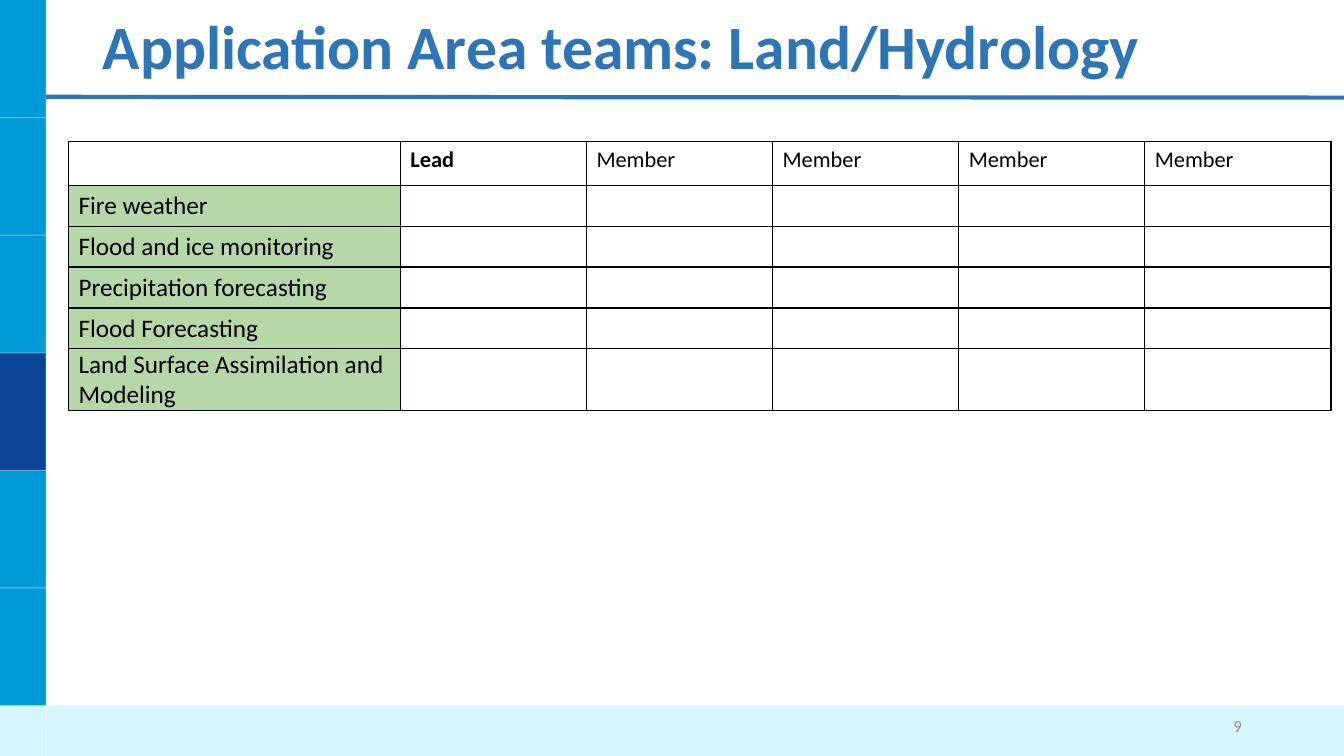
from dataclasses import dataclass

from lxml.etree import SubElement
from pptx import Presentation
from pptx.dml.color import RGBColor
from pptx.enum.shapes import MSO_CONNECTOR, MSO_SHAPE
from pptx.enum.text import MSO_ANCHOR, MSO_AUTO_SIZE, PP_ALIGN
from pptx.oxml.ns import qn
from pptx.slide import Slide
from pptx.table import _Cell
from pptx.text.text import _Paragraph
from pptx.util import Cm, Pt


@dataclass(frozen=True)
class Theme:
    font: str = "Calibri"
    blue: str = "2E75B6"
    side: str = "0099D8"
    navy: str = "0B4596"
    foot: str = "D5F5FF"
    green: str = "B6D7A8"
    black: str = "000000"
    white: str = "FFFFFF"
    gray: str = "8C8C8C"
    title: int = 44
    label: int = 18
    head: int = 16
    page: int = 12


@dataclass(frozen=True)
class Block:
    left: float
    top: float
    width: float
    height: float
    color: str


@dataclass(frozen=True)
class Rule:
    x1: float
    y1: float
    x2: float
    y2: float
    color: str
    width: float
    alpha: int = 100


THEME = Theme()
WIDE, HIGH = 33.87, 19.05
SIDE = 1.16
FOOT = 17.78
STEP = FOOT / 6

BLOCKS = [
    Block(0, 0, SIDE, HIGH, THEME.side),
    Block(0, 3 * STEP, SIDE, STEP, THEME.navy),
    Block(0, FOOT, WIDE, HIGH - FOOT, THEME.foot),
]
RULES = [
    *(Rule(0, n * STEP, SIDE, n * STEP, THEME.white, 0.75, 40) for n in range(1, 7)),
    Rule(SIDE, 0, SIDE, HIGH, THEME.white, 0.75, 40),
    Rule(SIDE, 2.44, WIDE, 2.46, THEME.blue, 3),
]
HEADS = ["Lead"] + ["Member"] * 4
AREAS = [
    "Fire weather",
    "Flood and ice monitoring",
    "Precipitation forecasting",
    "Flood Forecasting",
    "Land Surface Assimilation and Modeling",
]
COLS = [8.36] + [4.69] * len(HEADS)
ROWS = [1.11] + [1.03] * (len(AREAS) - 1) + [1.56]


def add_run(para: _Paragraph, text: str, size: int, color: str, bold: bool = False) -> None:
    run = para.add_run()
    run.text = text
    run.font.name = THEME.font
    run.font.size = Pt(size)
    run.font.bold = bold
    run.font.color.rgb = RGBColor.from_string(color)


def add_block(slide: Slide, block: Block) -> None:
    shape = slide.shapes.add_shape(
        MSO_SHAPE.RECTANGLE, Cm(block.left), Cm(block.top), Cm(block.width), Cm(block.height)
    )
    shape.shadow.inherit = False
    shape.fill.solid()
    shape.fill.fore_color.rgb = RGBColor.from_string(block.color)
    shape.line.fill.background()


def add_rule(slide: Slide, rule: Rule) -> None:
    line = slide.shapes.add_connector(
        MSO_CONNECTOR.STRAIGHT, Cm(rule.x1), Cm(rule.y1), Cm(rule.x2), Cm(rule.y2)
    )
    line.line.width = Pt(rule.width)
    line.line.color.rgb = RGBColor.from_string(rule.color)
    props = line._element.spPr
    if rule.alpha < 100:
        tint = props.find(".//" + qn("a:srgbClr"))
        SubElement(tint, qn("a:alpha"), val=str(rule.alpha * 1000))
    SubElement(props, qn("a:effectLst"))


def add_title(slide: Slide, text: str) -> None:
    title = slide.shapes.title
    title.left, title.top, title.width, title.height = Cm(2.34), Cm(0.1), Cm(29.21), Cm(2.31)
    frame = title.text_frame
    frame.auto_size = MSO_AUTO_SIZE.NONE
    frame.vertical_anchor = MSO_ANCHOR.MIDDLE
    para = frame.paragraphs[0]
    para.alignment = PP_ALIGN.LEFT
    para.line_spacing = 0.9
    add_run(para, text, THEME.title, THEME.blue, True)


def style_cell(cell: _Cell, color: str | None = None) -> None:
    """Draw the cell's four borders, then fill it or leave it clear."""
    props = cell._tc.get_or_add_tcPr()
    for side in ("lnL", "lnR", "lnT", "lnB"):
        edge = SubElement(props, qn(f"a:{side}"), w=str(Pt(1)))
        fill = SubElement(edge, qn("a:solidFill"))
        SubElement(fill, qn("a:srgbClr"), val=THEME.black)
    if color:
        cell.fill.solid()
        cell.fill.fore_color.rgb = RGBColor.from_string(color)
    else:
        cell.fill.background()


def add_teams(slide: Slide) -> None:
    frame = slide.shapes.add_table(
        len(ROWS), len(COLS), Cm(1.73), Cm(3.56), Cm(sum(COLS)), Cm(sum(ROWS))
    )
    table = frame.table
    table.first_row = table.horz_banding = False
    for col, width in zip(table.columns, COLS):
        col.width = Cm(width)
    for row, height in zip(table.rows, ROWS):
        row.height = Cm(height)
    for cell in table.iter_cells():
        style_cell(cell)
    for n, head in enumerate(HEADS, 1):
        para = table.cell(0, n).text_frame.paragraphs[0]
        add_run(para, head, THEME.head, THEME.black, n == 1)
    for n, area in enumerate(AREAS, 1):
        cell = table.cell(n, 0)
        cell.fill.solid()
        cell.fill.fore_color.rgb = RGBColor.from_string(THEME.green)
        cell.vertical_anchor = MSO_ANCHOR.MIDDLE
        cell.margin_left = Cm(0.25)
        cell.margin_right = cell.margin_top = cell.margin_bottom = 0
        add_run(cell.text_frame.paragraphs[0], area, THEME.label, THEME.black)


def add_page(slide: Slide, text: str) -> None:
    box = slide.shapes.add_textbox(Cm(23.93), Cm(FOOT), Cm(7.62), Cm(1.02))
    frame = box.text_frame
    frame.word_wrap = True
    frame.vertical_anchor = MSO_ANCHOR.MIDDLE
    para = frame.paragraphs[0]
    para.alignment = PP_ALIGN.RIGHT
    add_run(para, text, THEME.page, THEME.gray)


def main() -> None:
    deck = Presentation()
    deck.slide_width, deck.slide_height = Cm(WIDE), Cm(HIGH)
    slide = deck.slides.add_slide(deck.slide_layouts[5])
    for block in BLOCKS:
        add_block(slide, block)
    for rule in RULES:
        add_rule(slide, rule)
    add_title(slide, "Application Area teams: Land/Hydrology")
    add_teams(slide)
    add_page(slide, "9")
    deck.save("out.pptx")


if __name__ == "__main__":
    main()
